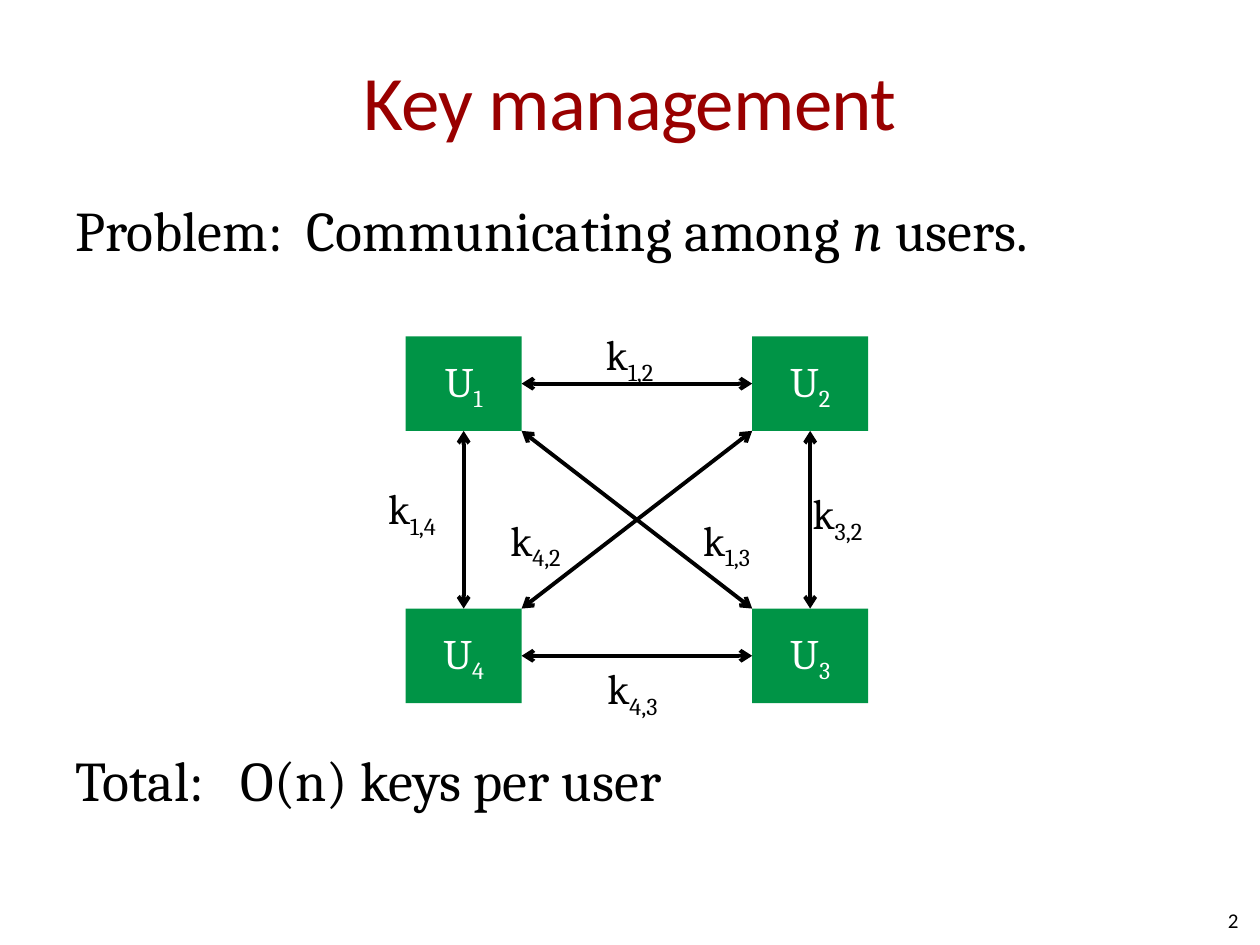
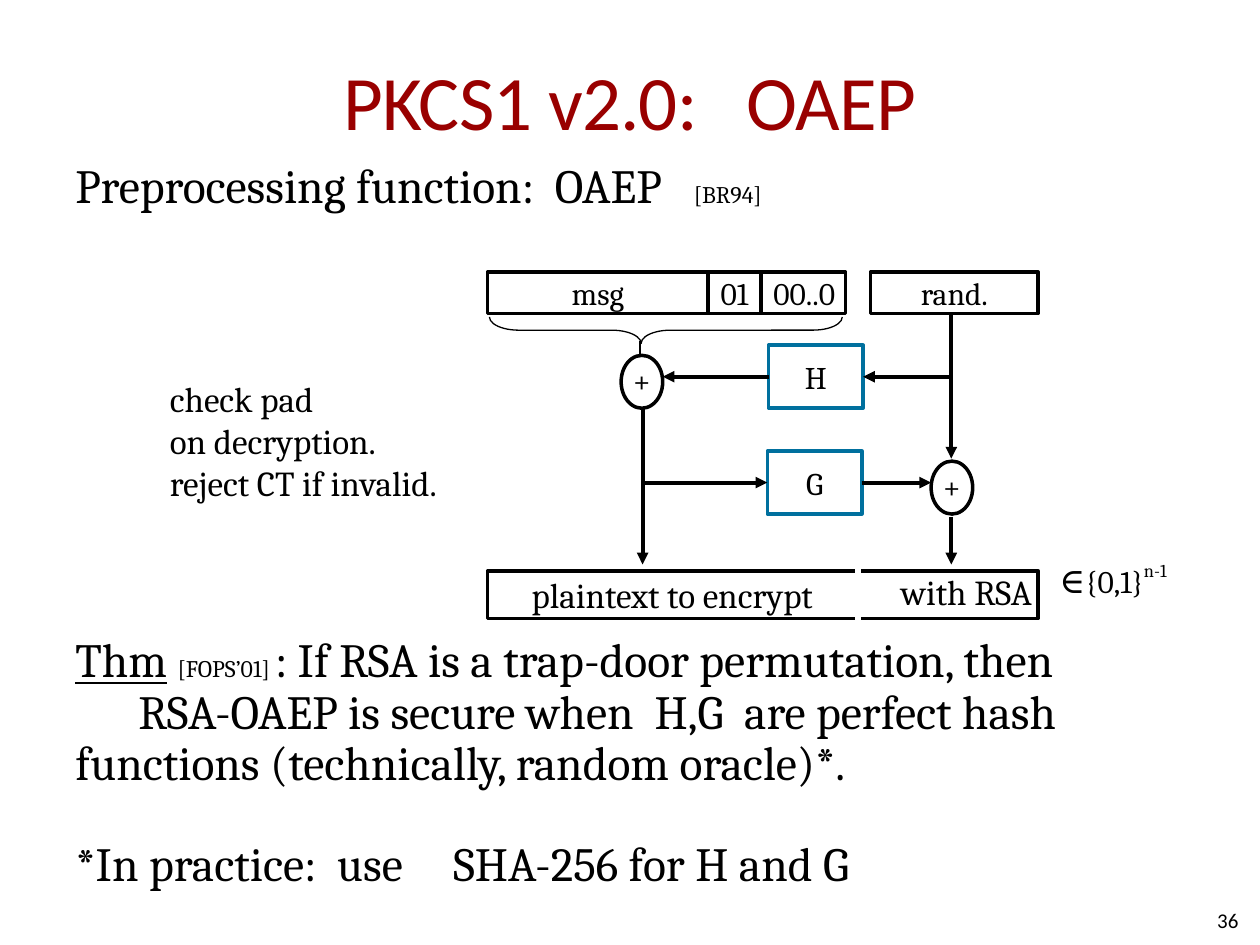
import pptx
import pptx.dml.color
import pptx.enum.shapes
import pptx.enum.text
import pptx.oxml
import pptx.oxml.ns
import pptx.util
from dataclasses import dataclass
from lxml import etree

Inches = pptx.util.Inches
Pt = pptx.util.Pt
Preset = pptx.enum.shapes.MSO_SHAPE
Align = pptx.enum.text.PP_ALIGN
Anchor = pptx.enum.text.MSO_ANCHOR
Fit = pptx.enum.text.MSO_AUTO_SIZE
qn = pptx.oxml.ns.qn


@dataclass(frozen=True)
class Theme:
    """Colours, fonts and type sizes shared by the slides."""
    title_color: str = "990000"
    ink: str = "000000"
    paper: str = "FFFFFF"
    user_fill: str = "009446"
    hash_line: str = "00709E"
    title_font: str = "Calibri"
    text_font: str = "Cambria"
    title_size: float = 44
    statement_size: float = 32
    theorem_size: float = 27.2
    citation_size: float = 13.6
    user_size: float = 24
    note_size: float = 20
    diagram_size: float = 18
    number_size: float = 12
    outline: float = 2
    arrow: float = 2.25
    hairline: float = 0.75
    subscript: int = -25
    superscript: int = 50


THEME = Theme()
NO_INSETS = (0, 0, 0, 0)
TEXT_INSETS = (0.1, 0.05, 0.1, 0.05)


def color(value):
    return pptx.dml.color.RGBColor.from_string(value)


# Text

def style_span(span, size, ink=THEME.ink, font=THEME.text_font,
               italic=None, underline=None, baseline=None):
    span.font.name = font
    span.font.size = Pt(size)
    span.font.color.rgb = color(ink)
    span.font.italic = italic
    span.font.underline = underline
    if baseline:
        span._r.get_or_add_rPr().set("baseline", str(baseline * 1000))


def write(para, size, *parts, **style):
    """Each part is a text, or a pair of a text and its own style."""
    for part in parts:
        text, own = (part, {}) if isinstance(part, str) else part
        for number, line in enumerate(text.split("\n")):
            if number:
                para.add_line_break()
            span = para.add_run()
            span.text = line
            style_span(span, **{"size": size, **style, **own})


def indexed(letter, index):
    return letter, (index, {"baseline": THEME.subscript})


def set_frame(frame, insets=TEXT_INSETS, anchor=Anchor.TOP, wrap=True, fit=Fit.NONE):
    left, top, right, bottom = insets
    frame.margin_left, frame.margin_right = Inches(left), Inches(right)
    frame.margin_top, frame.margin_bottom = Inches(top), Inches(bottom)
    frame.vertical_anchor = anchor
    frame.word_wrap = wrap
    frame.auto_size = fit


def set_tabs(para, *stops):
    tab_list = etree.SubElement(para._p.get_or_add_pPr(), qn("a:tabLst"))
    for stop in stops:
        etree.SubElement(tab_list, qn("a:tab"), pos=str(Inches(stop)), algn="l")


def add_text(page, left, top, width, height, **frame_style):
    box = page.shapes.add_textbox(*map(Inches, (left, top, width, height)))
    set_frame(box.text_frame, **frame_style)
    return box.text_frame


def add_label(page, place, size, *parts, insets=NO_INSETS):
    frame = add_text(page, *place, insets=insets, wrap=False, fit=Fit.SHAPE_TO_FIT_TEXT)
    write(frame.paragraphs[0], size, *parts)


def add_page(deck, title, number):
    page = deck.slides.add_slide(deck.slide_layouts.get_by_name("Title Only"))
    heading = page.shapes.title
    heading.left, heading.top = Inches(0.5), Inches(0.17)
    heading.width, heading.height = Inches(9), Inches(1.25)
    frame = heading.text_frame
    frame.text = title
    set_frame(frame, (0, 0.05, 0, 0.05), Anchor.MIDDLE)
    para = frame.paragraphs[0]
    para.alignment = Align.CENTER
    for span in para.runs:
        style_span(span, THEME.title_size, THEME.title_color, THEME.title_font)
        span._r.get_or_add_rPr().set("spc", "-50")

    # Page number
    frame = add_text(page, 7.5, 7.1, 2.33, 0.4, insets=NO_INSETS, anchor=Anchor.MIDDLE)
    frame.paragraphs[0].alignment = Align.RIGHT
    write(frame.paragraphs[0], THEME.number_size, number, font=THEME.title_font)
    return page


# Diagram parts

def add_box(page, place, preset=Preset.RECTANGLE, fill=THEME.paper, line=THEME.ink,
            line_width=THEME.outline):
    box = page.shapes.add_shape(preset, *map(Inches, place))
    box.shadow.inherit = False
    if fill:
        box.fill.solid()
        box.fill.fore_color.rgb = color(fill)
    else:
        box.fill.background()
    if line:
        box.line.color.rgb = color(line)
        box.line.width = Pt(line_width)
    else:
        box.line.fill.background()
    return box


def add_cell(page, place, text, align=Align.CENTER, size=THEME.diagram_size,
             insets=TEXT_INSETS, **look):
    box = add_box(page, place, **look)
    set_frame(box.text_frame, insets, Anchor.MIDDLE, wrap=False)
    para = box.text_frame.paragraphs[0]
    para.alignment = align
    write(para, size, text)
    return box


def add_xor(page, left, top):
    add_cell(page, (left, top, 0.33, 0.42), "+", preset=Preset.OVAL,
             insets=(0.1, 0.05, 0.1, 0.08))


def add_user(page, left, top, index):
    box = add_box(page, (left, top, 0.92, 0.75), fill=THEME.user_fill, line=None)
    set_frame(box.text_frame, NO_INSETS, Anchor.MIDDLE)
    para = box.text_frame.paragraphs[0]
    para.alignment = Align.CENTER
    write(para, THEME.user_size, *indexed("U", index), ink=THEME.paper)
    return box


def add_line(page, start, end, width=THEME.arrow, ink=THEME.ink, head=None, tail=None):
    line = page.shapes.add_connector(pptx.enum.shapes.MSO_CONNECTOR.STRAIGHT,
                                     *map(Inches, (*start, *end)))
    line.line.color.rgb = color(ink)
    line.line.width = Pt(width)
    outline = line.line._get_or_add_ln()
    for tag, kind in (("a:headEnd", head), ("a:tailEnd", tail)):
        if kind:
            etree.SubElement(outline, qn(tag), type=kind)
    etree.SubElement(line._element.spPr, qn("a:effectLst"))
    return line


def add_flow(page, start, end):
    return add_line(page, start, end, tail="triangle")


# Slides

def build_key_management(deck):
    page = add_page(deck, "Key management", "2")

    # Statements above and below the diagram
    frame = add_text(page, 0.5, 1.5, 9, 5.2)
    write(frame.paragraphs[0], THEME.statement_size, "Problem:  Communicating among ",
          ("n", {"italic": True}), " users.")
    total = frame.add_paragraph()
    total.space_before = Pt(276)
    write(total, THEME.statement_size, "Total:   O(n) keys per user")

    # Users at the corners
    left, right, top, bottom = 3.22, 5.97, 2.67, 4.83
    corners = {"1": (left, top), "2": (right, top), "3": (right, bottom), "4": (left, bottom)}
    users = {index: add_user(page, *corner, index) for index, corner in corners.items()}

    # Keys along the sides: user, side, user, side
    for first, first_side, second, second_side in (
            ("1", 2, "4", 0), ("1", 3, "2", 1), ("4", 3, "3", 1), ("3", 0, "2", 2)):
        line = add_line(page, corners[first], corners[second], head="arrow", tail="arrow")
        line.begin_connect(users[first], first_side)
        line.end_connect(users[second], second_side)

    # Keys along the diagonals
    inner_left, inner_top = left + 0.92, top + 0.75
    for start, end in (((right, inner_top), (inner_left, bottom)),
                       ((inner_left, inner_top), (right, bottom))):
        add_line(page, start, end, head="arrow", tail="arrow")

    for pair, x, y in (("1,2", 4.81, 2.61), ("1,4", 3.08, 3.83), ("3,2", 6.45, 3.87),
                       ("4,3", 4.82, 5.26), ("4,2", 4.05, 4.08), ("1,3", 5.58, 4.08)):
        add_label(page, (x, y, 0.47, 0.4), THEME.user_size, *indexed("k", pair))


def add_theorem_text(page):
    citation = {"size": THEME.citation_size}
    frame = add_text(page, 0.5, 1.19, 9.5, 6.14)
    write(frame.paragraphs[0], THEME.theorem_size, "Preprocessing function:  OAEP   ",
          ("[BR94]", citation))
    theorem = (
        ("Thm", {"underline": True}), " ", ("[FOPS’01] ", citation),
        ": If RSA is a trap-door permutation, then \n\tRSA-OAEP is secure when  H,G  "
        "are perfect hash \tfunctions (technically, random oracle)*.")
    practice = ("*In practice:  use \tSHA-256 for H and G",)
    for gap, parts in ((242, theorem), (28, practice)):
        para = frame.add_paragraph()
        para.line_spacing = 0.9
        para.space_before = Pt(gap)
        set_tabs(para, 0.5, 3)
        write(para, THEME.theorem_size, *parts)


def build_oaep(deck):
    page = add_page(deck, "PKCS1 v2.0:   OAEP", "36")
    add_theorem_text(page)

    # Hash functions and the flow between them
    hash_h = add_cell(page, (6.1, 2.74, 0.75, 0.5), "H", line=THEME.hash_line)
    hash_g = add_cell(page, (6.09, 3.58, 0.75, 0.5), "G", line=THEME.hash_line)
    add_flow(page, (7.55, 2.49), (7.55, 3.64))
    add_flow(page, (6.1, 2.99), (5.26, 2.99)).begin_connect(hash_h, 1)
    add_flow(page, (7.54, 2.99), (6.85, 2.99)).end_connect(hash_h, 3)
    add_flow(page, (6.84, 3.83), (7.39, 3.83)).begin_connect(hash_g, 3)
    add_flow(page, (5.09, 3.83), (6.09, 3.83)).end_connect(hash_g, 1)
    add_flow(page, (5.1, 3.24), (5.1, 4.48))
    add_flow(page, (7.55, 4.1), (7.55, 4.48))
    add_xor(page, 4.93, 2.82)
    add_xor(page, 7.39, 3.66)

    # Input row
    for left, width, text, align in (
            (6.91, 1.33, "rand.", Align.CENTER), (3.87, 1.75, "msg", Align.CENTER),
            (5.62, 0.42, "01", Align.LEFT), (6.04, 0.67, "00..0", Align.LEFT)):
        add_cell(page, (left, 2.16, width, 0.33), text, align)

    # Brace under the padded message
    brace = add_box(page, (5.18, 1.22, 0.21, 2.8), Preset.LEFT_BRACE, fill=None,
                    line_width=THEME.hairline)
    brace.rotation = 270
    brace.adjustments[0], brace.adjustments[1] = 1.11, 0.43
    add_line(page, (5.08, 2.71), (5.08, 2.81), THEME.hairline)

    # Output row, split by a white gap, with a label in each half
    add_cell(page, (3.87, 4.53, 4.37, 0.38), "plaintext to encrypt", Align.LEFT,
             THEME.note_size, insets=(0.35, 0.05, 0.1, 0.05))
    add_line(page, (6.81, 4.51), (6.81, 4.93), 3, THEME.paper)
    add_label(page, (7.15, 4.53, 1.05, 0.38), THEME.note_size, "with RSA")

    # Side notes
    add_label(page, (1.25, 2.95, 2.44, 1.11), THEME.note_size,
              "check pad\non decryption.\nreject CT if invalid.", insets=TEXT_INSETS)
    add_label(page, (8.31, 4.38, 1.17, 0.44), THEME.diagram_size,
              ("∈", {"size": THEME.note_size}), "{0,1}",
              ("n-1", {"baseline": THEME.superscript}), insets=TEXT_INSETS)


def main():
    deck = pptx.Presentation()
    deck.slide_width, deck.slide_height = Inches(10), Inches(7.5)
    build_key_management(deck)
    build_oaep(deck)
    deck.save("out.pptx")


if __name__ == "__main__":
    main()
